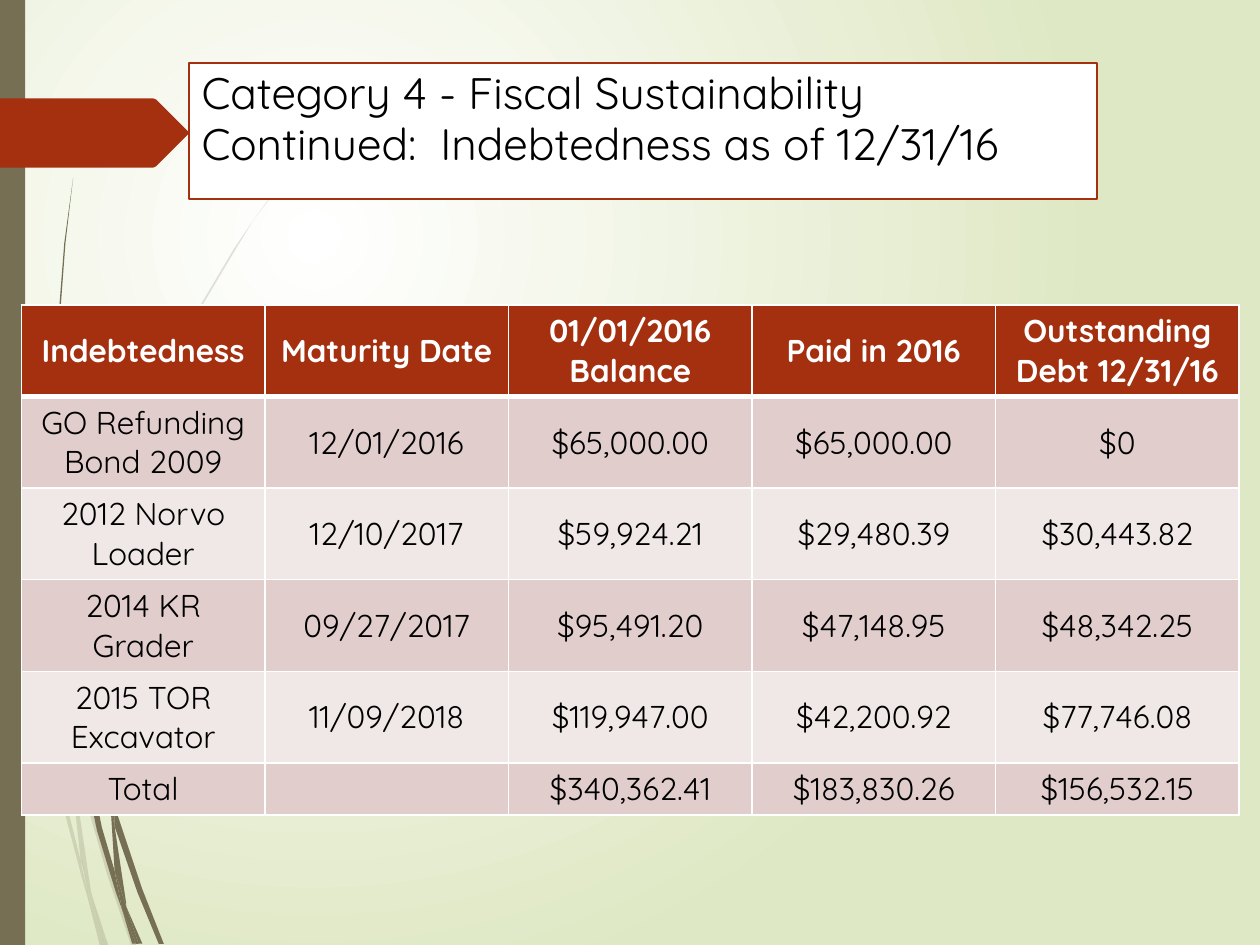
"""Build the indebtedness slide with its grass decoration, title and debt table."""
import dataclasses
import typing

import lxml.etree
import pptx
import pptx.dml.color
import pptx.enum.shapes
import pptx.enum.text
import pptx.oxml.ns
import pptx.util

Pt = pptx.util.Pt
qn = pptx.oxml.ns.qn
Points = list[tuple[float, float]]

FONT = "Quicksand"
WHITE, BLACK, RUST, OLIVE = "FFFFFF", "000000", "A53010", "766F54"
PALE_GREEN, ROSE, LIGHT_ROSE = "DFE8C4", "E1CDCC", "F0E8E7"


@dataclasses.dataclass
class Outline:
    points: Points
    color: str = OLIVE
    opacity: int = 100


@dataclasses.dataclass
class CellStyle:
    fill: str
    color: str
    bold: bool
    top: float = 1
    bottom: float = 1


FAINT_BLADES: list[Points] = [
    [(5.8, 252), (4.3, 231.8), (0, 203), (0, 215.3), (5, 247.7)],
    [(28.8, 375.8), (42.5, 431.3), (42.5, 421.9), (31, 374.4), (7.2, 248.4), (8.6, 270.7)],
    [(46.1, 437), (43.9, 429.1), (43.9, 439.2), (61.2, 499.7), (74.9, 540), (77.8, 540),
     (63.4, 498.2)],
    [(59.8, 540), (61.9, 540), (52.6, 511.9)],
    [(46.1, 491.8), (34.6, 445.7), (15.8, 337.7), (8.6, 270.7), (5.8, 252), (13.7, 338.4),
     (32.4, 447.1), (46.1, 499), (50.4, 514.1), (49.7, 509)],
    [(41.8, 431.3), (43.2, 465.1), (46.1, 491.8), (48.2, 498.2), (52.6, 511.9), (51.8, 508.3),
     (45.4, 465.1), (43.9, 439.2)],
    [(43.9, 420.5), (54.7, 332.6), (79.9, 251.3), (114.5, 176.4), (134.6, 142.6), (144.7, 126),
     (156.2, 110.9), (156.2, 110.2), (144.7, 126), (133.9, 141.8), (113.8, 175.7),
     (79.2, 250.6), (54, 331.9), (42.5, 420.5), (42.5, 421.9), (43.9, 429.1)],
    [(50.4, 514.1), (56.9, 540), (59, 540)],
    [(43.9, 439.2), (43.9, 429.1), (42.5, 421.9), (41.8, 431.3)],
    [(48.2, 498.2), (46.8, 491.8), (49.7, 509), (50.4, 514.1), (59, 540), (59.8, 540),
     (52.6, 511.9)],
]
DARK_BLADES: list[Points] = [
    [(3.6, 79.2), (10.1, 167.8), (19.4, 255.6), (33.1, 343.4), (33.8, 346.3), (32.4, 329),
     (32.4, 326.2), (21.6, 255.6), (10.8, 167), (4.3, 78.5), (2.9, 34.6), (2.2, 0), (1.4, 0),
     (2.2, 34.6)],
    [(52.6, 426.2), (63.4, 464.4), (63.4, 455.8), (55.4, 424.8), (36, 339.8), (38.2, 363.6)],
    [(67.7, 467.3), (65.5, 461.5), (65.5, 472.3), (78.5, 509.8), (90.7, 539.3),
     (93.6, 539.3), (81.4, 508.3)],
    [(65.5, 497.5), (58.3, 473), (43.2, 400.3), (38.2, 363.6), (33.8, 343.4), (40.3, 401),
     (55.4, 474.5), (66.2, 509.8), (69.8, 519.8), (69.1, 516.2)],
    [(36, 339.8), (34.6, 326.2), (31.7, 251.3), (34.6, 176.4), (37.4, 139), (41.8, 101.5),
     (36.7, 139), (33.8, 176.4), (31, 251.3), (32.4, 323.3), (35.3, 339.8)],
    [(79.2, 539.3), (81.4, 539.3), (72, 517.7)],
    [(33.8, 343.4), (38.2, 363.6), (36, 339.8), (35.3, 339.8), (32.4, 323.3), (32.4, 326.2)],
    [(65.5, 455.8), (74.2, 397.4), (94.3, 342.7), (121.7, 292.3), (137.5, 269.3),
     (155.5, 247.7), (137.5, 268.6), (121, 291.6), (92.9, 341.3), (72.7, 396.7),
     (63.4, 454.3), (65.5, 461.5)],
    [(69.8, 519.8), (75.6, 539.3), (77.8, 539.3)],
    [(63.4, 464.4), (65.5, 497.5), (69.1, 508.3), (72, 517.7), (72, 515.5), (65.5, 472.3),
     (64.8, 468.7)],
    [(63.4, 464.4), (64.8, 468.7), (65.5, 472.3), (65.5, 461.5), (63.4, 454.3)],
    [(69.1, 508.3), (65.5, 497.5), (69.1, 516.2), (69.8, 519.8), (77.8, 539.3),
     (79.2, 539.3), (72, 517.7)],
]
ARROW: Points = [(0, 56.2), (87.5, 56.2), (89.3, 56.9), (107.3, 75), (107.3, 77),
                 (89.3, 95), (87.5, 95.8), (0, 95.8)]
DEBTS = [
    ["Indebtedness", "Maturity Date", "01/01/2016 Balance", "Paid in 2016",
     "Outstanding Debt 12/31/16"],
    ["GO Refunding Bond 2009", "12/01/2016", "$65,000.00", "$65,000.00", "$0"],
    ["2012 Norvo Loader", "12/10/2017", "$59,924.21", "$29,480.39", "$30,443.82"],
    ["2014 KR Grader", "09/27/2017", "$95,491.20", "$47,148.95", "$48,342.25"],
    ["2015 TOR Excavator", "11/09/2018", "$119,947.00", "$42,200.92", "$77,746.08"],
    ["Total", "", "$340,362.41", "$183,830.26", "$156,532.15"],
]


def rgb(color: str) -> pptx.dml.color.RGBColor:
    """Turn a hex string into a colour."""
    return pptx.dml.color.RGBColor.from_string(color)


def apply(target: typing.Any, values: dict[str, typing.Any]) -> None:
    """Set every attribute named in the format values."""
    for name, value in values.items():
        setattr(target, name, value)


def fill_solid(target: typing.Any, color: str) -> None:
    """Give a shape or cell a solid fill."""
    target.fill.solid()
    target.fill.fore_color.rgb = rgb(color)


def format_text(frame: typing.Any, text: str, paragraph_values: dict[str, typing.Any],
                font_values: dict[str, typing.Any], color: str) -> None:
    """Write one paragraph with its format."""
    paragraph = frame.paragraphs[0]
    apply(paragraph, paragraph_values)
    if text:
        run = paragraph.add_run()
        run.text = text
        apply(run.font, {"name": FONT, **font_values})
        run.font.color.rgb = rgb(color)


def paint_background(slide: typing.Any) -> None:
    """Spread a circular gradient over the slide."""
    fill = slide.background.fill
    fill.gradient()
    for stop, color in zip(fill.gradient_stops, (WHITE, PALE_GREEN)):
        stop.color.rgb = rgb(color)
    gradient = next(slide.element.iter(qn("a:gradFill")))
    gradient.remove(gradient.find(qn("a:lin")))
    circle = lxml.etree.SubElement(gradient, qn("a:path"), path="circle")
    lxml.etree.SubElement(circle, qn("a:fillToRect"),
                          l="50000", t="50000", r="100000", b="100000")


def draw_outline(slide: typing.Any, outline: Outline) -> None:
    """Draw a closed filled outline."""
    vertices = [(Pt(x), Pt(y)) for x, y in outline.points]
    builder = slide.shapes.build_freeform(*vertices[0])
    builder.add_line_segments(vertices[1:])
    shape = builder.convert_to_shape()
    shape.shadow.inherit = False
    shape.line.fill.background()
    fill_solid(shape, outline.color)
    if outline.opacity < 100:
        color = shape.element.spPr.find(qn("a:solidFill"))[0]
        lxml.etree.SubElement(color, qn("a:alpha"), val=str(outline.opacity * 1000))


def draw_side_bar(slide: typing.Any) -> None:
    """Draw the bar along the left edge."""
    bar = slide.shapes.add_shape(pptx.enum.shapes.MSO_SHAPE.RECTANGLE, 0, 0, Pt(14.4), Pt(540))
    bar.shadow.inherit = False
    bar.line.fill.background()
    fill_solid(bar, OLIVE)


def place_title(slide: typing.Any, text: str) -> None:
    """Move the title to the front and format it."""
    title = slide.shapes.title
    slide.shapes.element.append(title.element)
    apply(title, {"left": Pt(108), "top": Pt(36), "width": Pt(519.1), "height": Pt(77.8)})
    fill_solid(title, WHITE)
    title.line.color.rgb = rgb(RUST)
    title.line.width = Pt(1.25)
    apply(title.text_frame, {"word_wrap": True,
                             "auto_size": pptx.enum.text.MSO_AUTO_SIZE.NONE,
                             "vertical_anchor": pptx.enum.text.MSO_ANCHOR.TOP})
    format_text(title.text_frame, text,
                {"alignment": pptx.enum.text.PP_ALIGN.LEFT, "line_spacing": 0.96},
                {"size": Pt(25.2)}, BLACK)


def fill_cell(cell: typing.Any, text: str, style: CellStyle) -> None:
    """Write a table cell with its fill and white borders."""
    fill_solid(cell, style.fill)
    cell.vertical_anchor = pptx.enum.text.MSO_ANCHOR.MIDDLE
    format_text(cell.text_frame, text, {"alignment": pptx.enum.text.PP_ALIGN.CENTER},
                {"size": Pt(18), "bold": style.bold}, style.color)
    properties = cell._tc.get_or_add_tcPr()
    widths = {"a:lnL": 1, "a:lnR": 1, "a:lnT": style.top, "a:lnB": style.bottom}
    for index, (tag, width) in enumerate(widths.items()):
        border = lxml.etree.Element(qn(tag), w=str(Pt(width)))
        solid = lxml.etree.SubElement(border, qn("a:solidFill"))
        lxml.etree.SubElement(solid, qn("a:srgbClr"), val=WHITE)
        properties.insert(index, border)


def draw_debt_table(slide: typing.Any) -> None:
    """Draw the debt table with banded rows."""
    heights = [52.3] * 5 + [29.7]
    table = slide.shapes.add_table(len(DEBTS), len(DEBTS[0]), Pt(12.2), Pt(174.2),
                                   Pt(696), Pt(sum(heights))).table
    for index, (texts, height) in enumerate(zip(DEBTS, heights)):
        table.rows[index].height = Pt(height)
        style = CellStyle(ROSE if index % 2 else LIGHT_ROSE, BLACK, False,
                          top=3 if index == 1 else 1)
        if index == 0:
            style = CellStyle(RUST, WHITE, True, bottom=3)
        for column, text in enumerate(texts):
            fill_cell(table.cell(index, column), text, style)


def main() -> None:
    """Build and save the presentation."""
    presentation = pptx.Presentation()
    apply(presentation, {"slide_width": Pt(720), "slide_height": Pt(540)})
    slide = presentation.slides.add_slide(presentation.slide_layouts[5])
    paint_background(slide)
    for points in FAINT_BLADES:
        draw_outline(slide, Outline(points, opacity=20))
    for points in DARK_BLADES:
        draw_outline(slide, Outline(points))
    draw_side_bar(slide)
    draw_outline(slide, Outline(ARROW, RUST))
    place_title(slide, "Category 4 - Fiscal Sustainability Continued:  Indebtedness as of 12/31/16")
    draw_debt_table(slide)
    presentation.save("out.pptx")


if __name__ == "__main__":
    main()
